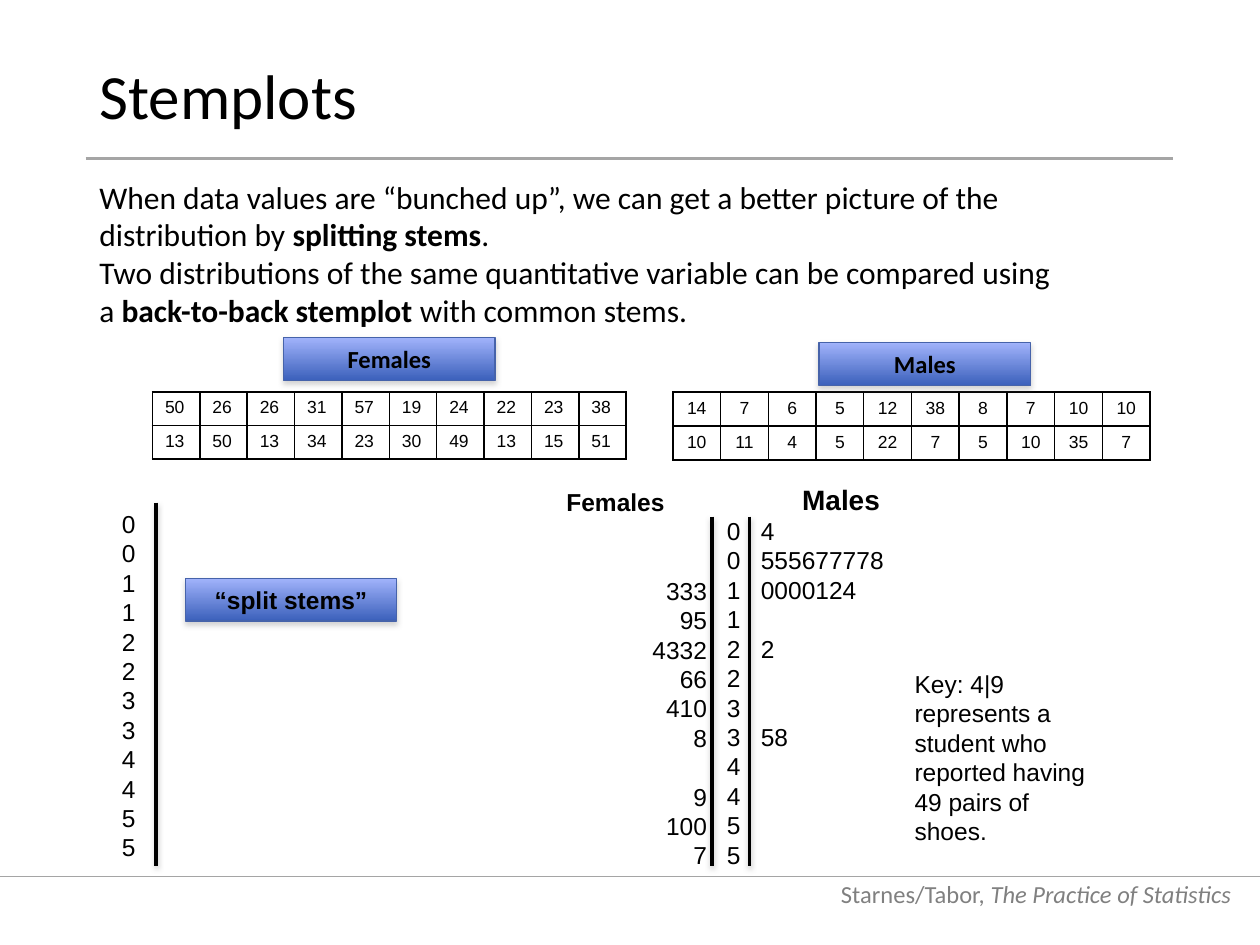
"""Build the slide on split stems and back-to-back stemplots."""
from lxml import etree
from pptx import Presentation
from pptx.dml.color import RGBColor
from pptx.enum.shapes import MSO_CONNECTOR, MSO_SHAPE
from pptx.enum.text import MSO_ANCHOR, PP_ALIGN
from pptx.oxml.ns import qn
from pptx.util import Inches, Pt

LEFT, CENTER, RIGHT = PP_ALIGN.LEFT, PP_ALIGN.CENTER, PP_ALIGN.RIGHT
TOP, MIDDLE, BOTTOM = MSO_ANCHOR.TOP, MSO_ANCHOR.MIDDLE, MSO_ANCHOR.BOTTOM
STRAIGHT, RECTANGLE = MSO_CONNECTOR.STRAIGHT, MSO_SHAPE.RECTANGLE

COLORS = {
    "text": "000000", "footer": "808080", "rule": "A5A5A5", "shadow": "808080",
    "label_top": "A1B3FB", "label_bottom": "3B60BB", "label_edge": "4663AA",
}
TITLE = "Stemplots"
INTRO = [
    [("When data values are “bunched up”, we can get a better picture of the distribution by ", False),
     ("splitting stems", True), (".", False)],
    [("Two distributions of the same quantitative variable can be compared using a ", False),
     ("back-to-back stemplot ", True), ("with common stems.", False)],
]
FOOTER = [("Starnes/Tabor,", False), (" The Practice of Statistics", True)]
KEY = "Key: 4|9 represents a student who reported having 49 pairs of shoes."
LABELS = [
    ("Females", "Calibri", 2.25, 2.68),
    ("Males", "Calibri", 6.5, 2.72),
    ("“split stems”", "Arial", 1.47, 4.59),
]
TABLES = [
    {"left": 1.21, "width": 3.76, "row": 0.26, "align": LEFT, "anchor": TOP, "rows": [
        [50, 26, 26, 31, 57, 19, 24, 22, 23, 38],
        [13, 50, 13, 34, 23, 30, 49, 13, 15, 51]]},
    {"left": 5.34, "width": 3.79, "row": 0.27, "align": CENTER, "anchor": MIDDLE, "rows": [
        [14, 7, 6, 5, 12, 38, 8, 7, 10, 10],
        [10, 11, 4, 5, 22, 7, 5, 10, 35, 7]]},
]
STEMS = [str(stem) for stem in range(6) for _ in range(2)]
FEMALE_LEAVES = ["", "", "333", "95", "4332", "66", "410", "8", "", "9", "100", "7"]
MALE_LEAVES = ["4", "555677778", "0000124", "", "2", "", "", "58", "", "", "", ""]
RULES = [(0, 6.96, 10, 0.5), (0.68, 1.26, 9.31, 1.5)]
STEM_LINES = [(1.24, 3.99), (5.95, 4.1), (5.65, 4.1)]
STEM_BOTTOM = 6.87
PLOT_SIZE, LINE_FACTOR = 14, 1.2


def rgb(name):
    return RGBColor.from_string(COLORS[name])


def style(para, size, font="Arial", bold=False, align=LEFT, color="text"):
    para.alignment = align
    para.font.size, para.font.name, para.font.bold = Pt(size), font, bold
    para.font.color.rgb = rgb(color)


def add_box(slide, left, top, width, height, anchor=TOP):
    frame = slide.shapes.add_textbox(*map(Inches, (left, top, width, height))).text_frame
    frame.word_wrap = True
    frame.vertical_anchor = anchor
    return frame


def next_para(frame, first):
    return frame.paragraphs[0] if first else frame.add_paragraph()


def add_effects(shape, opacity=None, distance=None):
    effects = etree.SubElement(shape.element.spPr, qn("a:effectLst"))
    if opacity:
        shadow = etree.SubElement(effects, qn("a:outerShdw"), blurRad=str(Pt(3.1)),
                                  dist=str(Pt(distance)), dir="5400000", rotWithShape="0")
        color = etree.SubElement(shadow, qn("a:srgbClr"), val=COLORS["shadow"])
        etree.SubElement(color, qn("a:alpha"), val=str(opacity * 1000))


def add_line(slide, start, end, color, width, *shadow):
    line = slide.shapes.add_connector(STRAIGHT, *map(Inches, (*start, *end)))
    line.line.color.rgb, line.line.width = rgb(color), Pt(width)
    add_effects(line, *shadow)


def add_label(slide, text, font, left, top):
    label = slide.shapes.add_shape(RECTANGLE, *map(Inches, (left, top, 1.68, 0.34)))
    label.fill.gradient()
    label.fill.gradient_angle = 270
    for stop, color in zip(label.fill.gradient_stops, ("label_top", "label_bottom")):
        stop.color.rgb = rgb(color)
    label.line.color.rgb, label.line.width = rgb("label_edge"), Pt(0.75)
    add_effects(label, 35, 1.8)
    label.text_frame.text = text
    style(label.text_frame.paragraphs[0], 14, font, True, CENTER)


def add_borders(cell):
    properties = cell._tc.get_or_add_tcPr()
    for index, side in enumerate(("lnL", "lnR", "lnT", "lnB")):
        border = etree.Element(qn(f"a:{side}"), w=str(Pt(1)))
        fill = etree.SubElement(border, qn("a:solidFill"))
        etree.SubElement(fill, qn("a:srgbClr"), val=COLORS["text"])
        properties.insert(index, border)


def add_data(slide, data):
    rows = data["rows"]
    columns = len(rows[0])
    table = slide.shapes.add_table(
        len(rows), columns, Inches(data["left"]), Inches(3.11),
        Inches(data["width"]), Inches(data["row"] * len(rows))).table
    table.first_row = table.horz_banding = False
    for column in table.columns:
        column.width = Inches(data["width"] / columns)
    for cell, value in zip(table.iter_cells(), sum(rows, [])):
        cell.text = str(value)
        cell.vertical_anchor = data["anchor"]
        cell.fill.background()
        add_borders(cell)
        style(cell.text_frame.paragraphs[0], 10, align=data["align"])


def add_rows(frame, rows, align=LEFT, heading=None, heading_size=PLOT_SIZE, indent=0, tab=None):
    """Write plot rows, turning rows without text into space before the next one."""
    if heading:
        para = frame.paragraphs[0]
        para.text = heading
        para._p.get_or_add_pPr().set("marL", str(Inches(indent)))
        style(para, heading_size, bold=True, align=CENTER)
        para.line_spacing = Pt(heading_size * LINE_FACTOR)
    pitch, skipped = PLOT_SIZE * LINE_FACTOR, 0
    for index, row in enumerate(rows):
        if not row:
            skipped += 1
            continue
        para = next_para(frame, index == 0 and not heading)
        para.text = row
        if tab:
            stops = etree.SubElement(para._p.get_or_add_pPr(), qn("a:tabLst"))
            etree.SubElement(stops, qn("a:tab"), pos=str(Inches(tab)), algn="l")
        style(para, PLOT_SIZE, align=align)
        para.line_spacing = Pt(pitch)
        if skipped:
            para.space_before = Pt(pitch * skipped)
            skipped = 0


def main():
    deck = Presentation()
    deck.slide_width, deck.slide_height = Inches(10), Inches(7.5)
    slide = deck.slides.add_slide(deck.slide_layouts[5])

    title = slide.shapes.title
    title.left, title.top, title.width, title.height = map(Inches, (0.69, 0.4, 8.62, 0.78))
    title.text_frame.text = TITLE
    title.text_frame.vertical_anchor = MIDDLE
    style(title.text_frame.paragraphs[0], 36, "Calibri")
    title.text_frame.paragraphs[0].line_spacing = 0.9

    footer = add_box(slide, 6.47, 6.86, 3.4, 0.4, BOTTOM).paragraphs[0]
    style(footer, 14, "Calibri", align=RIGHT, color="footer")
    for text, italic in FOOTER:
        span = footer.add_run()
        span.text, span.font.italic = text, italic

    for left, top, right, width in RULES:
        add_line(slide, (left, top), (right, top), "rule", width)

    intro = add_box(slide, 0.69, 1.36, 7.92, 1.31)
    for index, spans in enumerate(INTRO):
        para = next_para(intro, index == 0)
        style(para, 18, "Calibri")
        for text, bold in spans:
            span = para.add_run()
            span.text, span.font.bold = text, bold

    for data in TABLES:
        add_data(slide, data)
    for label in LABELS:
        add_label(slide, *label)
    for left, top in STEM_LINES:
        add_line(slide, (left, top), (left, STEM_BOTTOM), "text", 2, 38, 1.6)

    add_rows(add_box(slide, 0.87, 3.99, 0.33, 2.53), STEMS)
    add_rows(add_box(slide, 4.06, 3.82, 1.65, 3.16), FEMALE_LEAVES, RIGHT, "Females")
    male_rows = [f"{stem}\t{leaves}" if leaves else stem
                 for stem, leaves in zip(STEMS, MALE_LEAVES)]
    add_rows(add_box(slide, 5.67, 3.78, 1.65, 3.2), male_rows, LEFT, "Males", 16, 0.36, 0.27)
    add_rows(add_box(slide, 7.16, 5.26, 1.68, 1.51), [KEY])

    deck.save("out.pptx")


if __name__ == "__main__":
    main()
